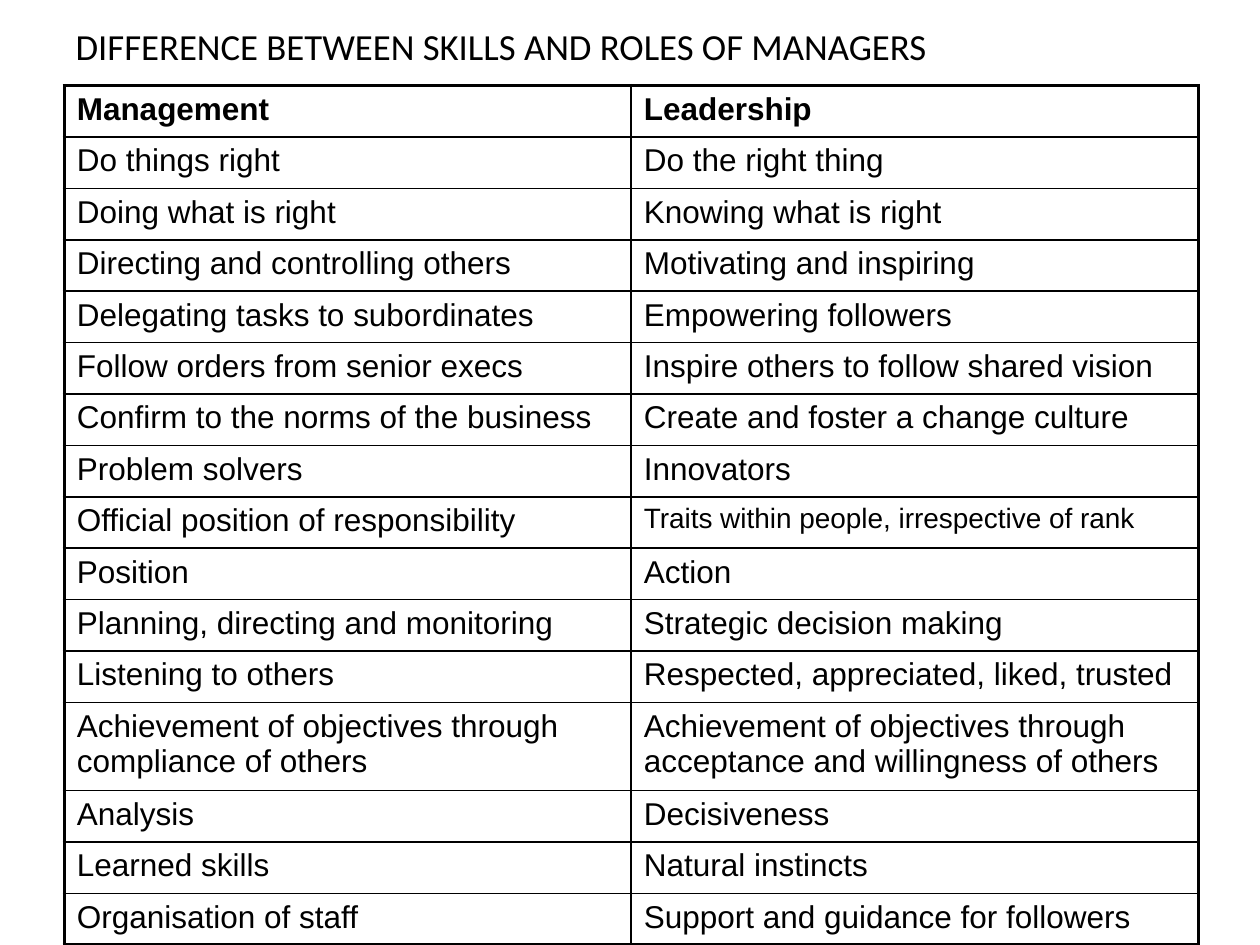
from dataclasses import dataclass

from lxml.etree import SubElement
from pptx import Presentation
from pptx.dml.color import RGBColor
from pptx.enum.text import MSO_ANCHOR, MSO_AUTO_SIZE, PP_ALIGN
from pptx.oxml import parse_xml
from pptx.oxml.ns import nsdecls, qn
from pptx.slide import Slide
from pptx.table import _Cell as Cell
from pptx.util import Inches, Pt

BLACK = RGBColor(0x00, 0x00, 0x00)
OUTER_LINE = Pt(2.25)
INNER_LINE = Pt(1)
TABLE_HEIGHT = 6.82
TALL_ROW = 0.7


@dataclass(frozen=True)
class Contrast:
    management: str
    leadership: str
    leadership_size: int = 18
    bold: bool = False
    tall: bool = False


CONTRASTS = [
    Contrast("Management", "Leadership", bold=True),
    Contrast("Do things right", "Do the right thing"),
    Contrast("Doing what is right", "Knowing what is right"),
    Contrast("Directing and controlling others", "Motivating and inspiring"),
    Contrast("Delegating tasks to subordinates", "Empowering followers"),
    Contrast("Follow orders from senior execs", "Inspire others to follow shared vision"),
    Contrast("Confirm to the norms of the business", "Create and foster a change culture"),
    Contrast("Problem solvers", "Innovators"),
    Contrast("Official position of responsibility",
             "Traits within people, irrespective of rank", leadership_size=16),
    Contrast("Position", "Action"),
    Contrast("Planning, directing and monitoring", "Strategic decision making"),
    Contrast("Listening to others", "Respected, appreciated, liked, trusted"),
    Contrast("Achievement of objectives through compliance of others",
             "Achievement of objectives through acceptance and willingness of others",
             tall=True),
    Contrast("Analysis", "Decisiveness"),
    Contrast("Learned skills", "Natural instincts"),
    Contrast("Organisation of staff", "Support and guidance for followers"),
]


def write_cell(cell: Cell, text: str, size: int, bold: bool) -> None:
    cell.text = text
    cell.fill.background()
    paragraph = cell.text_frame.paragraphs[0]
    font = paragraph.font
    font.name = "Arial"
    font.size = Pt(size)
    font.bold = bold
    font.color.rgb = BLACK
    spacing = parse_xml(f'<a:spcBef {nsdecls("a")}><a:spcPct val="20000"/></a:spcBef>')
    paragraph._p.get_or_add_pPr().insert(0, spacing)


def draw_borders(cell: Cell, outer_edges: dict[str, bool]) -> None:
    properties = cell._tc.get_or_add_tcPr()
    for position, (edge, is_outer) in enumerate(outer_edges.items()):
        width = OUTER_LINE if is_outer else INNER_LINE
        border = parse_xml(f'<a:ln{edge} {nsdecls("a")} w="{width}"/>')
        fill = SubElement(border, qn("a:solidFill"))
        SubElement(fill, qn("a:srgbClr")).set("val", str(BLACK))
        properties.insert(position, border)


def add_title(slide: Slide, text: str) -> None:
    title = slide.shapes.title
    title.left, title.top = Inches(0.5), Inches(0.13)
    title.width, title.height = Inches(8.25), Inches(0.47)
    frame = title.text_frame
    frame.text = text
    frame.auto_size = MSO_AUTO_SIZE.NONE
    frame.vertical_anchor = MSO_ANCHOR.MIDDLE
    heading = frame.paragraphs[0]
    heading.alignment = PP_ALIGN.LEFT
    heading.font.name = "Calibri"
    heading.font.size = Pt(21)
    heading.font.color.rgb = BLACK


def add_comparison(slide: Slide, contrasts: list[Contrast]) -> None:
    table = slide.shapes.add_table(
        len(contrasts), 2, Inches(0.51), Inches(0.68), Inches(9), Inches(TABLE_HEIGHT)
    ).table
    table.horz_banding = False
    table.first_row = False
    tall_count = sum(contrast.tall for contrast in contrasts)
    row_height = (TABLE_HEIGHT - tall_count * TALL_ROW) / (len(contrasts) - tall_count)
    last_row = len(contrasts) - 1
    for index, contrast in enumerate(contrasts):
        table.rows[index].height = Inches(TALL_ROW if contrast.tall else row_height)
        entries = [(contrast.management, 18), (contrast.leadership, contrast.leadership_size)]
        for column, (text, size) in enumerate(entries):
            cell = table.cell(index, column)
            write_cell(cell, text, size, contrast.bold)
            draw_borders(cell, {"L": column == 0, "R": column == 1,
                                "T": index == 0, "B": index == last_row})


def main() -> None:
    presentation = Presentation()
    presentation.slide_width = Inches(10)
    presentation.slide_height = Inches(7.5)
    slide = presentation.slides.add_slide(presentation.slide_layouts[5])
    add_title(slide, "DIFFERENCE BETWEEN SKILLS AND ROLES OF MANAGERS")
    add_comparison(slide, CONTRASTS)
    presentation.save("out.pptx")


if __name__ == "__main__":
    main()
